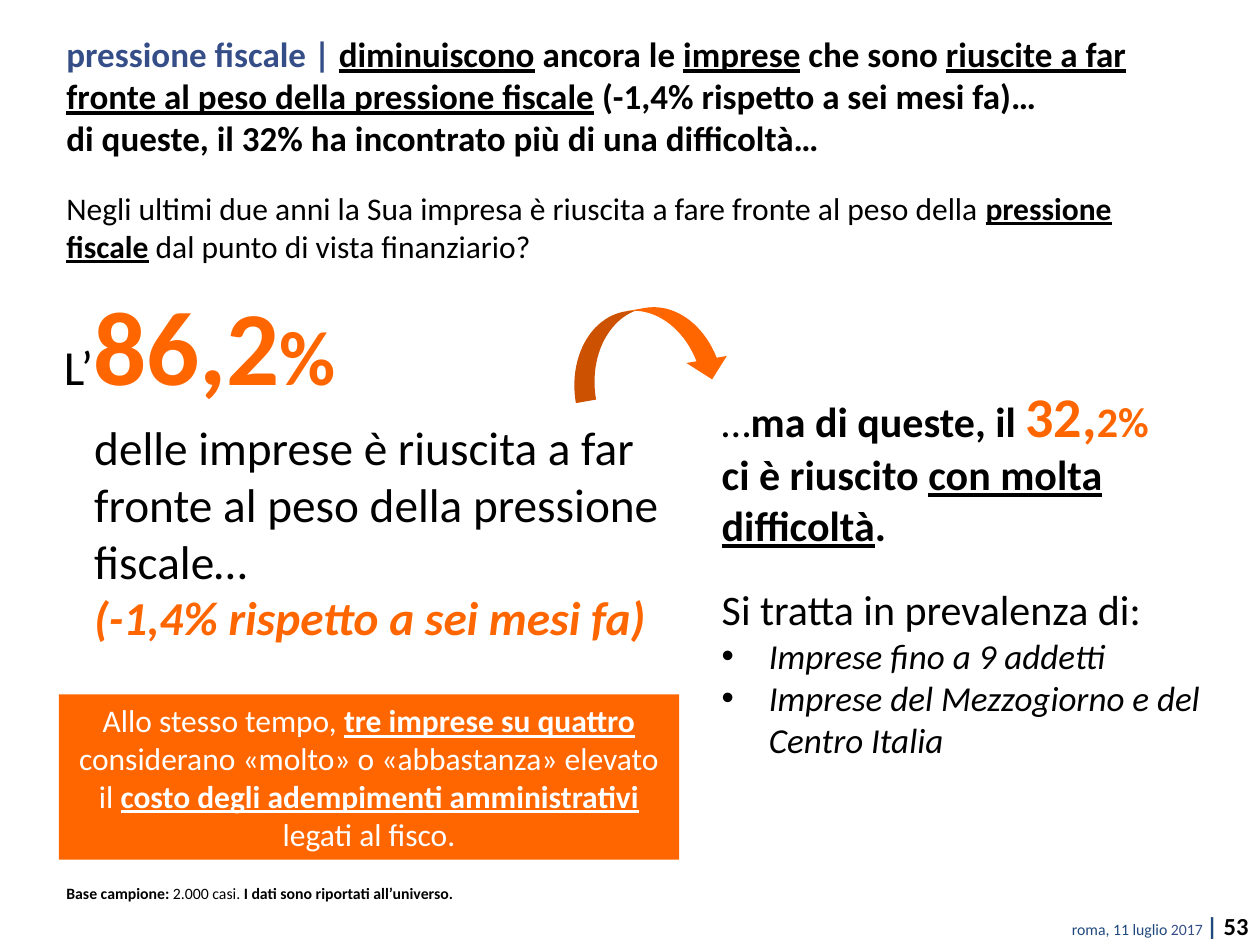
from dataclasses import dataclass

from lxml.etree import SubElement
from pptx import Presentation
from pptx.dml.color import RGBColor as Rgb
from pptx.enum.shapes import MSO_SHAPE as Shape
from pptx.enum.text import MSO_ANCHOR as Anchor, PP_ALIGN as Align
from pptx.oxml.ns import qn
from pptx.util import Cm, Pt


@dataclass(frozen=True)
class Theme:
    font: str = "Calibri"
    black: str = "000000"
    white: str = "FFFFFF"
    blue: str = "364E88"
    navy: str = "1F497D"
    orange: str = "FF6600"
    note: int = 9
    page: int = 14
    body: int = 18
    head: int = 20
    lead: int = 24
    claim: int = 27
    prefix: int = 28
    share: int = 32
    unit: int = 44
    hero: int = 60


T = Theme()


# Text helpers: a run is (text, marks, colour, size); marks use b, i and u
def write(para, runs, size, color=T.black, align=Align.LEFT):
    para.alignment = align
    for text, marks, *own in runs:
        run = para.add_run()
        run.text = text
        font = run.font
        font.name = T.font
        font.bold, font.italic, font.underline = (m in marks for m in "biu")
        font.color.rgb = Rgb.from_string(own[0] if own else color)
        font.size = Pt(own[1] if len(own) > 1 else size)


def fill_text(frame, paras, size, **style):
    frame.word_wrap = True
    for i, runs in enumerate(paras):
        para = frame.add_paragraph() if i else frame.paragraphs[0]
        write(para, runs, size, **style)


def add_text(slide, x, y, w, h, paras, size, **style):
    frame = slide.shapes.add_textbox(Cm(x), Cm(y), Cm(w), Cm(h)).text_frame
    fill_text(frame, paras, size, **style)
    return frame


def add_solid(slide, kind, x, y, w, h):
    shape = slide.shapes.add_shape(kind, Cm(x), Cm(y), Cm(w), Cm(h))
    shape.shadow.inherit = False
    shape.fill.solid()
    shape.fill.fore_color.rgb = Rgb.from_string(T.orange)
    shape.line.fill.background()
    return shape


def add_bullet(para):
    props = para._p.get_or_add_pPr()
    props.set("marL", str(Cm(0.95)))
    props.set("indent", str(-Cm(0.95)))
    SubElement(props, qn("a:buFont")).set("typeface", "Arial")
    SubElement(props, qn("a:buChar")).set("char", "•")


# Title and survey question
def add_head(slide, x, y, w):
    add_text(slide, x, y, w, 2.13, [
        [("pressione fiscale | ", "b", T.blue), ("diminuiscono", "bu"),
         (" ancora le ", "b"), ("imprese", "bu"), (" che sono ", "b"),
         ("riuscite a far fronte al peso della pressione fiscale", "bu"),
         (" (-1,4% rispetto a sei mesi fa)…", "b")],
        [("di queste, il 32% ha incontrato più di una difficoltà…", "b")],
    ], T.head)
    add_text(slide, x, y + 3.15, w - 0.12, 1.8, [
        [("Negli ultimi due anni la Sua impresa è riuscita a fare fronte "
          "al peso della ", ""), ("pressione fiscale", "bu"),
         (" dal punto di vista finanziario?", "")],
    ], T.body)


# Left column: key figure, claim and orange banner
def add_left(slide, x, y, w, h):
    add_text(slide, x - 0.15, y, 9.6, 2.82, [
        [("L’", ""), ("86,2", "b", T.orange, T.hero),
         ("%", "b", T.orange, T.unit)],
    ], T.prefix)
    add_text(slide, x + 0.46, y + 2.77, w - 0.56, 4.88, [
        [("delle imprese è riuscita a far fronte al peso della "
          "pressione fiscale…", "")],
        [("(-1,4% rispetto a sei mesi fa)", "bi", T.orange)],
    ], T.claim)
    tall = 3.33
    banner = add_solid(slide, Shape.RECTANGLE, x, y + h - tall, w, tall)
    banner.text_frame.vertical_anchor = Anchor.MIDDLE
    fill_text(banner.text_frame, [
        [("Allo stesso tempo, ", ""), ("tre imprese su quattro", "bu"),
         (" considerano «molto» o «abbastanza» elevato il ", ""),
         ("costo degli adempimenti amministrativi", "bu"),
         (" legati al fisco.", "")],
    ], T.body, color=T.white, align=Align.CENTER)


# Right column: curved arrow, detail and bullets
def add_right(slide, x, y, w, h):
    arrow = add_solid(slide, Shape.CURVED_RIGHT_ARROW,
                      x - 2.08, y - 2.13, 1.65, 3.2)
    arrow.rotation = 260.1
    arrow.element.spPr.find(qn("a:xfrm")).set("flipH", "1")
    frame = add_text(slide, x, y, w, h, [
        [("…", ""), ("ma di queste, il ", "b"),
         ("32,", "b", T.orange, T.share), ("2%", "b", T.orange)],
        [("ci è riuscito ", "b"), ("con molta difficoltà", "bu"), (".", "b")],
        [("Si tratta in prevalenza di:", "")],
    ], T.lead)
    frame.paragraphs[2].space_before = Pt(19.5)
    for item in ("Imprese fino a 9 addetti",
                 "Imprese del Mezzogiorno e del Centro Italia"):
        para = frame.add_paragraph()
        add_bullet(para)
        write(para, [(item, "i")], T.head)


# Sample note, date and page number
def add_foot(slide, x, y, w):
    add_text(slide, x, y, w, 0.64, [
        [("Base campione: ", "b"), ("2.000 casi. ", ""),
         ("I dati sono riportati all’universo.", "b")],
    ], T.note, align=Align.JUSTIFY)
    add_text(slide, x + 6.73, y + 0.54, 17.6, 0.84, [
        [("roma, 11 luglio", "", T.navy, T.note),
         (" 2017 ", "", T.blue, T.note),
         ("| ", "b", T.navy), ("53", "b")],
    ], T.page, align=Align.RIGHT)


def main():
    deck = Presentation()
    deck.slide_width, deck.slide_height = Cm(25.4), Cm(19.05)
    slide = deck.slides.add_slide(deck.slide_layouts[6])
    add_head(slide, 1.09, 0.53, 23.34)
    add_left(slide, 1.19, 5.54, 12.5, 11.79)
    add_right(slide, 14.3, 7.57, 10.39, 7.95)
    add_foot(slide, 1.09, 17.7, 23.39)
    deck.save("out.pptx")


if __name__ == "__main__":
    main()
